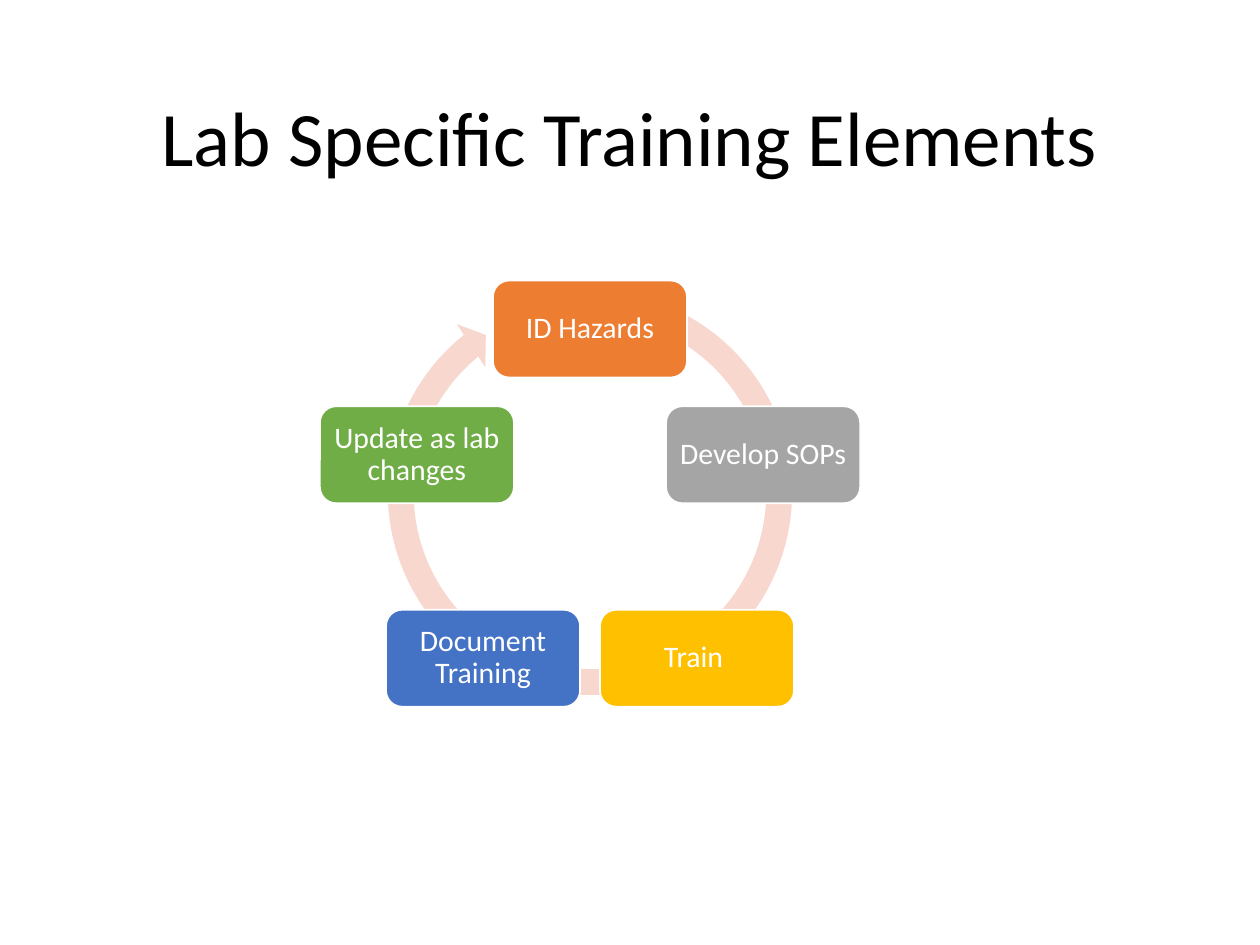
from dataclasses import dataclass
from math import cos, pi, sin

from pptx import Presentation
from pptx.dml.color import RGBColor
from pptx.enum.shapes import MSO_SHAPE as Preset
from pptx.enum.text import MSO_ANCHOR as Anchor, PP_ALIGN as Align
from pptx.shapes.autoshape import Shape
from pptx.slide import Slide
from pptx.util import Emu, Pt

PX_PER_INCH = 126
EMU_PER_PX = 914400 / PX_PER_INCH


@dataclass(frozen=True)
class Theme:
    font: str = "Calibri"
    title_size: int = 44
    step_size: int = 17
    line_spacing: float = 0.9
    title: str = "000000"
    step_text: str = "FFFFFF"
    outline: str = "FFFFFF"
    arrow: str = "F8D7CE"


@dataclass(frozen=True)
class Step:
    label: str
    color: str


@dataclass(frozen=True)
class Cycle:
    center_x: int
    center_y: int
    radius: int
    step_width: int
    step_height: int
    step_inset: int
    arrow_size: int


THEME = Theme()
CYCLE = Cycle(590, 511, 182, 194, 97, 9, 430)
ARROW_ADJUSTMENTS = (0.06, 3.31, 138.65, 173.32, 0.06)
STEPS = (
    Step("ID Hazards", "ED7D31"),
    Step("Develop SOPs", "A5A5A5"),
    Step("Train ", "FFC000"),
    Step("Document Training", "4472C4"),
    Step("Update as lab changes", "70AD47"),
)


def px(length: float) -> Emu:
    return Emu(round(length * EMU_PER_PX))


def write_text(box: Shape, text: str, size: int, color: str) -> None:
    frame = box.text_frame
    frame.word_wrap = True
    frame.vertical_anchor = Anchor.MIDDLE
    para = frame.paragraphs[0]
    para.text = text
    para.alignment = Align.CENTER
    para.line_spacing = THEME.line_spacing
    para.font.name = THEME.font
    para.font.size = Pt(size)
    para.font.color.rgb = RGBColor.from_string(color)


def add_filled(page: Slide, preset: Preset, center_x: float, center_y: float,
               width: int, height: int, color: str) -> Shape:
    box = page.shapes.add_shape(
        preset, px(center_x - width / 2), px(center_y - height / 2),
        px(width), px(height))
    box.shadow.inherit = False
    box.fill.solid()
    box.fill.fore_color.rgb = RGBColor.from_string(color)
    return box


def add_title(page: Slide, text: str) -> None:
    box = page.shapes.add_textbox(px(87), px(50), px(1086), px(183))
    write_text(box, text, THEME.title_size, THEME.title)


def add_cycle_arrow(page: Slide, cycle: Cycle) -> None:
    arrow = add_filled(page, Preset.CIRCULAR_ARROW, cycle.center_x, 493,
                       cycle.arrow_size, cycle.arrow_size, THEME.arrow)
    arrow.line.fill.background()
    for index, value in enumerate(ARROW_ADJUSTMENTS):
        arrow.adjustments[index] = value


def add_step(page: Slide, cycle: Cycle, step: Step, angle: float) -> None:
    box = add_filled(
        page, Preset.ROUNDED_RECTANGLE,
        cycle.center_x + cycle.radius * sin(angle),
        cycle.center_y - cycle.radius * cos(angle),
        cycle.step_width, cycle.step_height, step.color)
    box.line.color.rgb = RGBColor.from_string(THEME.outline)
    box.line.width = Pt(1)
    frame = box.text_frame
    frame.margin_left = frame.margin_right = px(cycle.step_inset)
    frame.margin_top = frame.margin_bottom = px(cycle.step_inset)
    write_text(box, step.label, THEME.step_size, THEME.step_text)


def main() -> None:
    deck = Presentation()
    deck.slide_width, deck.slide_height = px(1260), px(945)
    page = deck.slides.add_slide(deck.slide_layouts[6])
    add_title(page, "Lab Specific Training Elements")
    add_cycle_arrow(page, CYCLE)
    for index, step in enumerate(STEPS):
        add_step(page, CYCLE, step, 2 * pi * index / len(STEPS))
    deck.save("out.pptx")


if __name__ == "__main__":
    main()
